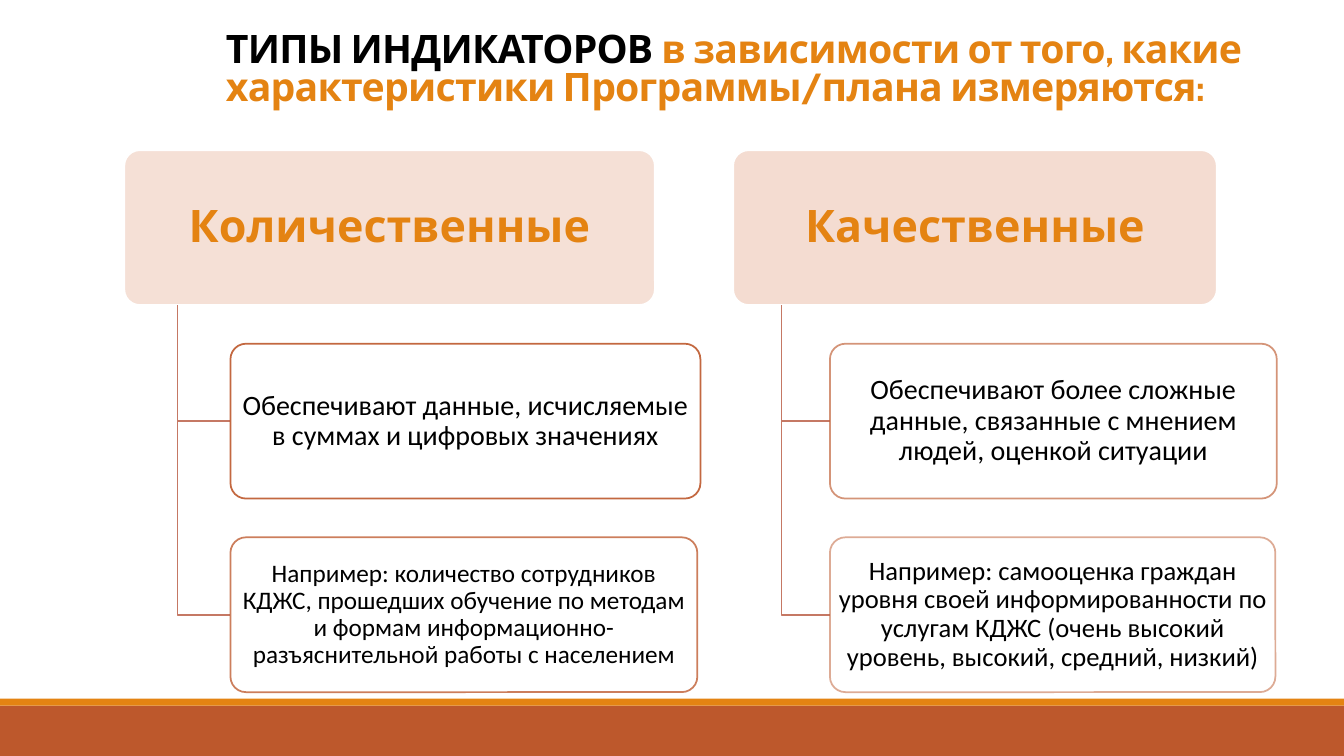
from dataclasses import dataclass
from typing import NamedTuple

from lxml import etree
from pptx import Presentation
from pptx.dml.color import RGBColor
from pptx.enum.shapes import MSO_SHAPE
from pptx.enum.text import MSO_ANCHOR, MSO_AUTO_SIZE, PP_ALIGN
from pptx.oxml.ns import qn
from pptx.util import Pt

RECT, ROUNDED = MSO_SHAPE.RECTANGLE, MSO_SHAPE.ROUNDED_RECTANGLE
LEFT, CENTER = PP_ALIGN.LEFT, PP_ALIGN.CENTER
MIDDLE, BOTTOM = MSO_ANCHOR.MIDDLE, MSO_ANCHOR.BOTTOM
NO_AUTOFIT = MSO_AUTO_SIZE.NONE
TITLE_ONLY = 5


@dataclass(frozen=True)
class Theme:
    orange: str = "E48312"
    rust: str = "BD582C"
    branch: str = "C57864"
    black: str = "000000"
    white: str = "FFFFFF"
    heading_font: str = "Cabin"
    body_font: str = "Calibri"
    title_size: float = 28
    heading_size: float = 32
    line_width: float = 1.25


class Box(NamedTuple):
    left: float
    top: float
    width: float
    height: float


class Tint(NamedTuple):
    color: str
    opacity: int = 100


class Words(NamedTuple):
    text: str
    size: float
    font: str
    color: str
    bold: bool = False


class Detail(NamedTuple):
    text: str
    size: float
    width: float
    outline_opacity: int


class IndicatorType(NamedTuple):
    name: str
    left: float
    width: float
    tint: Tint
    details: list[Detail]


THEME = Theme()
SLIDE_WIDTH, SLIDE_HEIGHT = 960, 540
CARD_HEIGHT = 110.6
FIRST_ROW = 107.3
ROW_PITCH = 1.25 * CARD_HEIGHT

INDICATOR_TYPES = [
    IndicatorType("Количественные", 88.8, 379, Tint("F5DDD2", 90), [
        Detail("Обеспечивают данные, исчисляемые в суммах и цифровых значениях",
               20, 335.7, 90),
        Detail("Например: количество сотрудников КДЖС, прошедших обучение по "
               "методам и формам информационно-разъяснительной работы с населением",
               18, 333.5, 77),
    ]),
    IndicatorType("Качественные", 523.7, 345.5, Tint("EABAA5", 50), [
        Detail("Обеспечивают более сложные данные, связанные с мнением людей, "
               "оценкой ситуации", 20, 319.2, 63),
        Detail("Например: самооценка граждан уровня своей информированности по "
               "услугам КДЖС (очень высокий уровень, высокий, средний, низкий)",
               19, 318.2, 50),
    ]),
]


def paint(fill, tint: Tint) -> None:
    """Make a fill solid, with the opacity of the tint."""
    fill.solid()
    fill.fore_color.rgb = RGBColor.from_string(tint.color)
    if tint.opacity < 100:
        color = fill._xPr.find(qn("a:solidFill"))[0]
        etree.SubElement(color, qn("a:alpha")).set("val", str(tint.opacity * 1000))


def outline(shape, tint: Tint) -> None:
    shape.line.width = Pt(THEME.line_width)
    paint(shape.line.fill, tint)


def add_words(paragraph, words: Words):
    run = paragraph.add_run()
    run.text = words.text
    run.font.size = Pt(words.size)
    run.font.name = words.font
    run.font.bold = words.bold
    run.font.color.rgb = RGBColor.from_string(words.color)
    return run


def add_title(slide) -> None:
    title = slide.shapes.title
    title.left, title.top = Pt(154.1), Pt(15.8)
    title.width, title.height = Pt(796.3), Pt(95)
    frame = title.text_frame
    frame.word_wrap = True
    frame.auto_size = NO_AUTOFIT
    frame.vertical_anchor = BOTTOM
    frame.margin_bottom = Pt(33)
    paragraph = frame.paragraphs[0]
    paragraph.alignment = LEFT
    paragraph.line_spacing = 0.8
    for text, color in (
        ("ТИПЫ ИНДИКАТОРОВ ", THEME.black),
        ("в зависимости от того, какие характеристики Программы/плана измеряются:",
         THEME.orange),
    ):
        run = add_words(paragraph, Words(text, THEME.title_size,
                                         THEME.heading_font, color, True))
        run.font._element.set("spc", "-50")


def add_bar(slide, box: Box, color: str) -> None:
    bar = slide.shapes.add_shape(RECT, *map(Pt, box))
    bar.shadow.inherit = False
    paint(bar.fill, Tint(color))
    bar.line.fill.background()


def add_card(slide, box: Box, fill: Tint, border: Tint, words: Words,
             margins: tuple[float, float]) -> None:
    card = slide.shapes.add_shape(ROUNDED, *map(Pt, box))
    card.adjustments[0] = 0.1
    card.shadow.inherit = False
    paint(card.fill, fill)
    outline(card, border)
    frame = card.text_frame
    frame.word_wrap = True
    frame.vertical_anchor = MIDDLE
    frame.margin_left = frame.margin_right = Pt(margins[0])
    frame.margin_top = frame.margin_bottom = Pt(margins[1])
    paragraph = frame.paragraphs[0]
    paragraph.alignment = CENTER
    paragraph.line_spacing = 0.9
    add_words(paragraph, words)


def add_branch(slide, stem: float, top: float, end: float, bottom: float) -> None:
    """Draw an elbow down the stem and right to a detail card."""
    builder = slide.shapes.build_freeform(Pt(stem), Pt(top))
    builder.add_line_segments(
        [(Pt(stem), Pt(bottom)), (Pt(end), Pt(bottom))], close=False)
    branch = builder.convert_to_shape()
    branch.shadow.inherit = False
    branch.fill.background()
    outline(branch, Tint(THEME.branch))


def add_indicator_type(slide, kind: IndicatorType) -> None:
    add_card(slide, Box(kind.left, FIRST_ROW, kind.width, CARD_HEIGHT),
             kind.tint, Tint(THEME.white),
             Words(kind.name, THEME.heading_size, THEME.heading_font,
                   THEME.orange, True), (5, 3))
    stem = kind.left + 0.1 * kind.width
    detail_left = kind.left + 0.2 * kind.width
    for row, detail in enumerate(kind.details, start=1):
        top = FIRST_ROW + row * ROW_PITCH
        add_branch(slide, stem, FIRST_ROW + CARD_HEIGHT,
                   detail_left, top + CARD_HEIGHT / 2)
        add_card(slide, Box(detail_left, top, detail.width, CARD_HEIGHT),
                 Tint(THEME.white, 90), Tint(THEME.rust, detail.outline_opacity),
                 Words(detail.text, detail.size, THEME.body_font, THEME.black),
                 (3, 2))


def main() -> None:
    deck = Presentation()
    deck.slide_width, deck.slide_height = Pt(SLIDE_WIDTH), Pt(SLIDE_HEIGHT)
    slide = deck.slides.add_slide(deck.slide_layouts[TITLE_ONLY])
    add_bar(slide, Box(0, 504, SLIDE_WIDTH, 36), THEME.rust)
    add_bar(slide, Box(0, 499, SLIDE_WIDTH, 5), THEME.orange)
    add_title(slide)
    for kind in INDICATOR_TYPES:
        add_indicator_type(slide, kind)
    deck.save("out.pptx")


if __name__ == "__main__":
    main()
